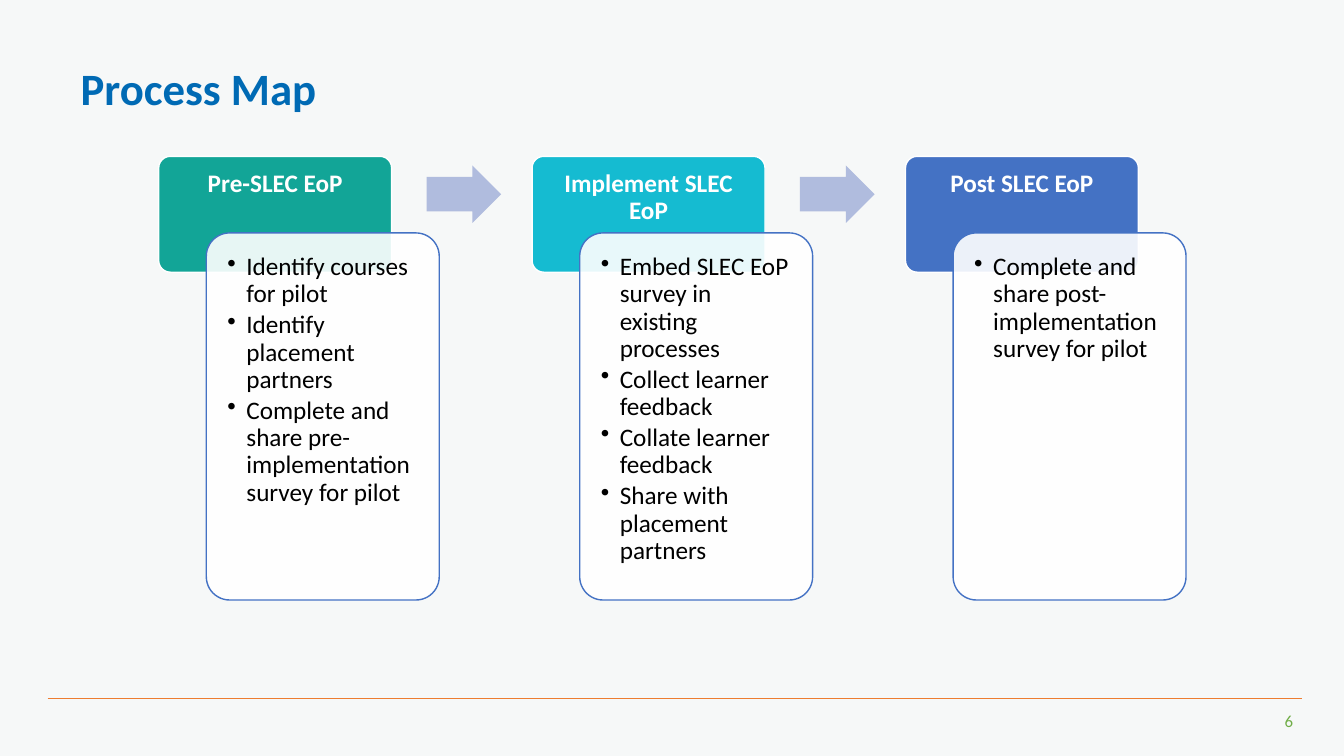
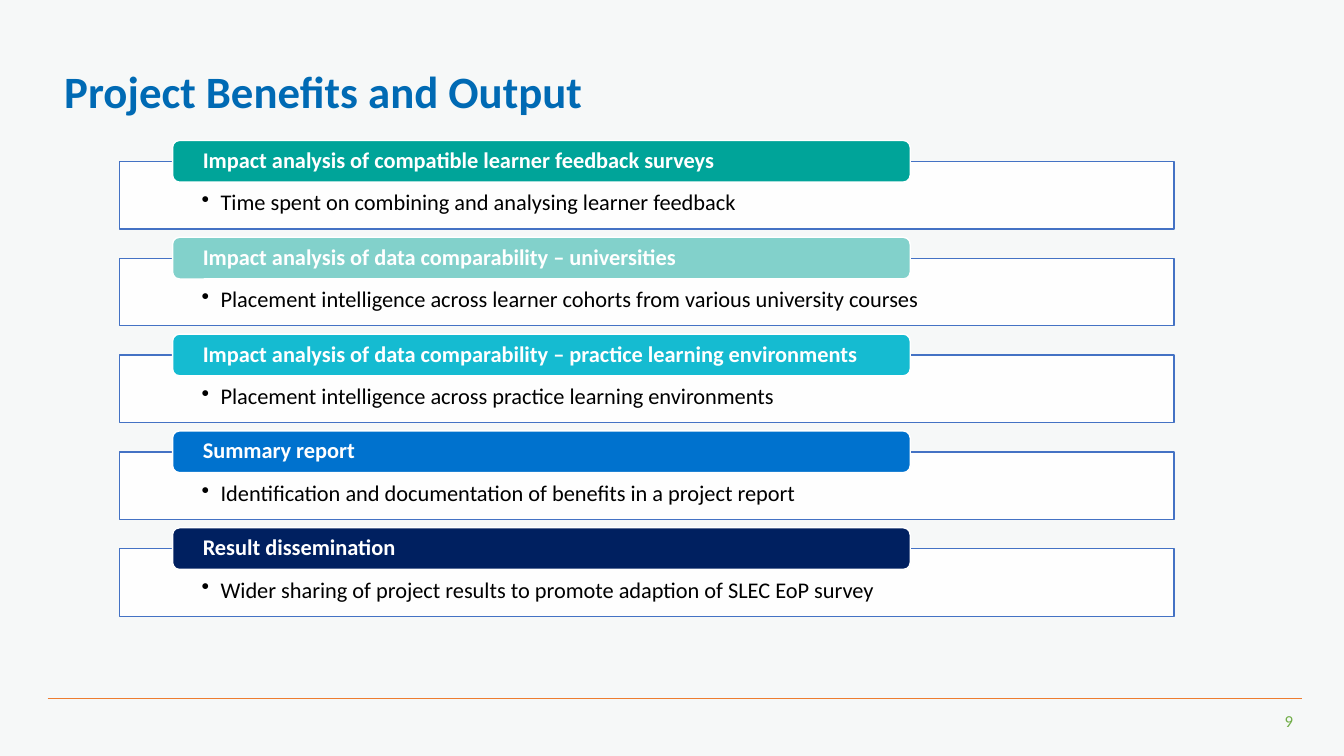
import dataclasses

import lxml.etree
import pptx
import pptx.dml.color
import pptx.enum.shapes
import pptx.enum.text
import pptx.oxml.ns
import pptx.util

Cm = pptx.util.Cm
Pt = pptx.util.Pt
RGB = pptx.dml.color.RGBColor.from_string
SHAPE = pptx.enum.shapes.MSO_SHAPE
ALIGN = pptx.enum.text.PP_ALIGN
ANCHOR = pptx.enum.text.MSO_ANCHOR
qn = pptx.oxml.ns.qn


@dataclasses.dataclass(frozen=True)
class Theme:
    font: str = "Calibri"
    page: str = "F6F8F8"
    title: str = "006AB4"
    rule: str = "ED7D31"
    number: str = "70AD47"
    outline: str = "4472C4"
    arrow: str = "B0BCDE"
    white: str = "FFFFFF"
    text: str = "000000"
    green: str = "12A597"
    teal: str = "00A499"
    mint: str = "82D1CB"
    cyan: str = "15BBD1"
    indigo: str = "4472C4"
    blue: str = "0072CE"
    navy: str = "002060"
    title_size: int = 32
    step_size: int = 18
    benefit_size: int = 16
    number_size: int = 12


theme = Theme()


def add_panel(slide, kind, box, fill, line=None, opacity=100, corner=None):
    """Add a flat filled shape; box is left, top, width, height in cm."""
    panel = slide.shapes.add_shape(kind, *map(Cm, box))
    panel.shadow.inherit = False
    panel.fill.solid()
    panel.fill.fore_color.rgb = RGB(fill)
    if opacity < 100:
        colour = panel._element.spPr.find(qn("a:solidFill"))[0]
        lxml.etree.SubElement(colour, qn("a:alpha"), val=str(opacity * 1000))
    if line:
        panel.line.color.rgb = RGB(line)
        panel.line.width = Pt(1)
    else:
        panel.line.fill.background()
    if corner is not None:
        panel.adjustments[0] = corner
    return panel


def write(shape, lines, size, colour, bold=False, align=ALIGN.LEFT, anchor=ANCHOR.TOP,
          insets=(0.25, 0.13, 0.25, 0.13), bullets=False, spacing=0.9):
    """Fill a shape with paragraphs; insets are left, top, right, bottom in cm."""
    frame = shape.text_frame
    frame.word_wrap = True
    frame.vertical_anchor = anchor
    (frame.margin_left, frame.margin_top,
     frame.margin_right, frame.margin_bottom) = map(Cm, insets)
    for index, line in enumerate(lines):
        paragraph = frame.paragraphs[0] if index == 0 else frame.add_paragraph()
        paragraph.alignment = align
        paragraph.line_spacing = spacing
        if bullets:
            paragraph.space_after = Pt(0.15 * size)
            properties = paragraph._p.get_or_add_pPr()
            properties.set("marL", str(Cm(0.48)))
            properties.set("indent", str(-Cm(0.48)))
            lxml.etree.SubElement(properties, qn("a:buChar"), char="•")
        run = paragraph.add_run()
        run.text = line
        run.font.name = theme.font
        run.font.size = Pt(size)
        run.font.bold = bold
        run.font.color.rgb = RGB(colour)


deck = pptx.Presentation()
deck.slide_width, deck.slide_height = Cm(33.87), Cm(19.05)

# Shared page: background, title, footer rule and page number
page_fill = deck.slide_master.background.fill
page_fill.solid()
page_fill.fore_color.rgb = RGB(theme.page)

slides = []
for heading, number, left, top in [
    ("Process Map", "6", 1.78, 1.4),
    ("Project Benefits and Output", "9", 1.37, 1.47),
]:
    slide = deck.slides.add_slide(deck.slide_layouts[6])
    slides.append(slide)
    page_number = slide.shapes.add_textbox(Cm(31.8), Cm(17.78), Cm(1.04), Cm(0.76))
    write(page_number, [number], theme.number_size, theme.number,
          align=ALIGN.RIGHT, spacing=1.0)
    rule = slide.shapes.add_connector(pptx.enum.shapes.MSO_CONNECTOR.STRAIGHT,
                                      Cm(1.2), Cm(17.6), Cm(32.8), Cm(17.6))
    rule.line.color.rgb = RGB(theme.rule)
    rule.line.width = Pt(0.5)
    lxml.etree.SubElement(rule._element.spPr, qn("a:effectLst"))
    title = slide.shapes.add_textbox(Cm(left), Cm(top), Cm(30.5), Cm(1.63))
    write(title, [heading], theme.title_size, theme.title, bold=True, spacing=1.0)

process_slide, benefits_slide = slides

# Process map: a header and an overlapping task card per phase, arrows between
phases = [
    ("Pre-SLEC EoP", theme.green, [
        "Identify courses for pilot",
        "Identify placement partners",
        "Complete and share pre-implementation survey for pilot",
    ]),
    ("Implement SLEC EoP", theme.cyan, [
        "Embed SLEC EoP survey in existing processes",
        "Collect learner feedback",
        "Collate learner feedback",
        "Share with placement partners",
    ]),
    ("Post SLEC EoP", theme.indigo, [
        "Complete and share post-implementation survey for pilot",
    ]),
]
for index, (phase, colour, tasks) in enumerate(phases):
    left = 4 + index * 9.41
    header = add_panel(process_slide, SHAPE.ROUNDED_RECTANGLE, (left, 3.94, 5.87, 2.92),
                       colour, theme.white, corner=0.1)
    write(header, [phase], theme.step_size, theme.white, bold=True,
          align=ALIGN.CENTER, insets=(0.27, 0.27, 0.27, 0.18))
    task_card = add_panel(process_slide, SHAPE.ROUNDED_RECTANGLE,
                          (left + 1.2, 5.87, 5.87, 9.25), theme.white,
                          theme.outline, opacity=90, corner=0.1)
    write(task_card, tasks, theme.step_size, theme.text,
          insets=(0.36, 0.36, 0.36, 0.36), bullets=True)
    if index < len(phases) - 1:
        next_arrow = add_panel(process_slide, SHAPE.RIGHT_ARROW,
                               (left + 6.75, 4.17, 1.88, 1.45), theme.arrow)
        next_arrow.adjustments[0] = 0.6

# Benefits: a detail box with a coloured label over its top edge
benefits = [
    ("Impact analysis of compatible learner feedback surveys", theme.teal,
     "Time spent on combining and analysing learner feedback"),
    ("Impact analysis of data comparability – universities", theme.mint,
     "Placement intelligence across learner cohorts from various university courses"),
    ("Impact analysis of data comparability – practice learning environments", theme.cyan,
     "Placement intelligence across practice learning environments"),
    ("Summary report", theme.blue,
     "Identification and documentation of benefits in a project report"),
    ("Result dissemination", theme.navy,
     "Wider sharing of project results to promote adaption of SLEC EoP survey"),
]
for index, (benefit, colour, detail) in enumerate(benefits):
    top = 3.54 + index * 2.44
    detail_box = add_panel(benefits_slide, SHAPE.RECTANGLE, (3.02, top + 0.53, 26.57, 1.7),
                           theme.white, theme.outline, opacity=90)
    write(detail_box, [detail], theme.benefit_size, theme.text,
          insets=(2.06, 0.76, 2.06, 0.3), bullets=True)
    label = add_panel(benefits_slide, SHAPE.ROUNDED_RECTANGLE, (4.35, top, 18.59, 1.05),
                      colour, theme.white)
    write(label, [benefit], theme.benefit_size, theme.white, bold=True,
          anchor=ANCHOR.MIDDLE, insets=(0.71, 0, 0.71, 0))

deck.save("out.pptx")
